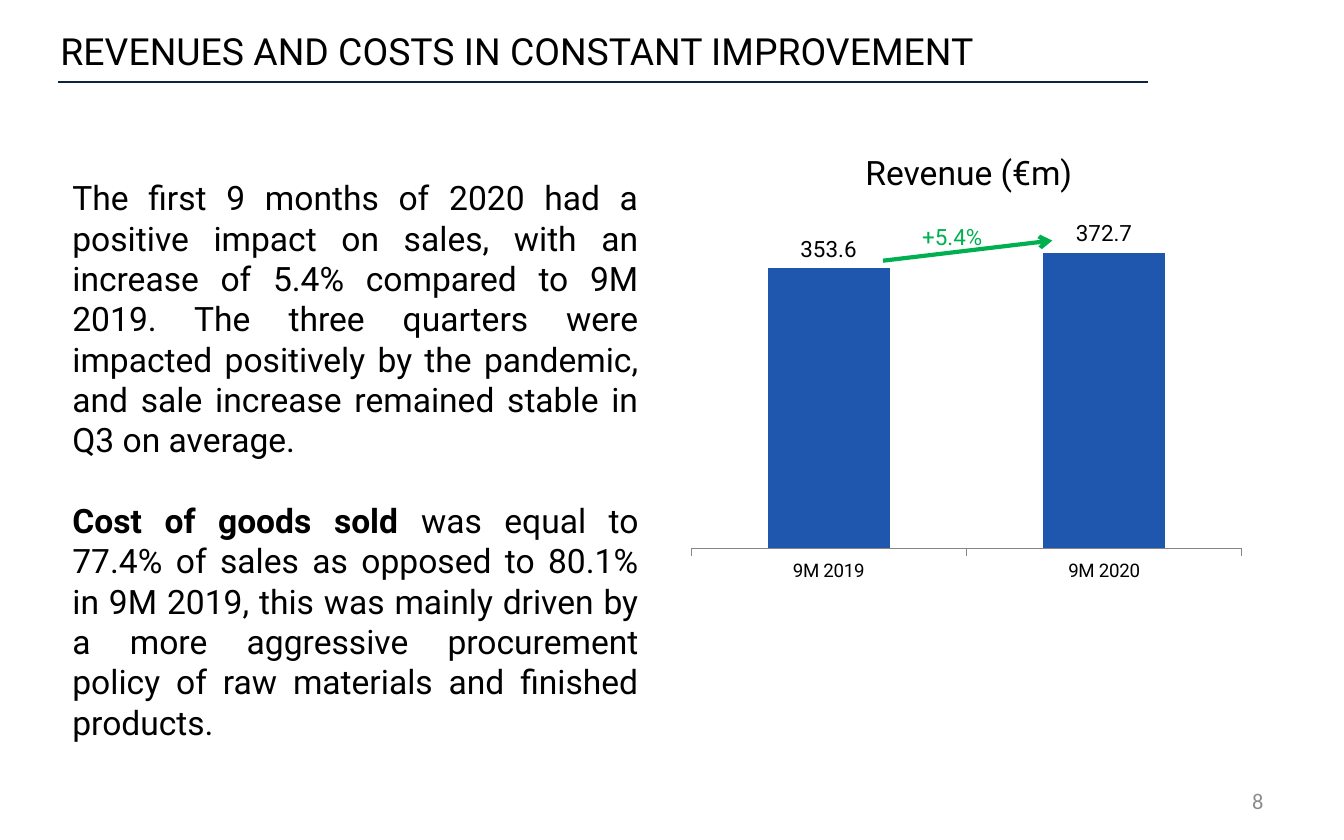
import pptx
import pptx.chart.data
import pptx.dml.color
import pptx.enum.chart
import pptx.enum.shapes
import pptx.enum.text
import pptx.oxml
import pptx.oxml.ns
import pptx.util

Inches, Pt = pptx.util.Inches, pptx.util.Pt
ALIGN, ANCHOR = pptx.enum.text.PP_ALIGN, pptx.enum.text.MSO_ANCHOR
COLORS = {"text": "000000", "bar": "1F57AE", "rule": "0E233E", "growth": "00B050",
          "page": "8C8C8C", "axis": "868686", "white": "FFFFFF"}


def rgb(name):
    """Return the named colour."""
    return pptx.dml.color.RGBColor.from_string(COLORS[name])


def style(font, size, color="text", name="Roboto"):
    """Format a font."""
    font.size, font.name = Pt(size), name
    font.color.rgb = rgb(color)


def add_line(s, start, end, color, width, arrow=False):
    """Draw a straight line, with an arrowhead at its end if asked."""
    line = s.shapes.add_connector(pptx.enum.shapes.MSO_CONNECTOR.STRAIGHT,
                                  *[Inches(v) for v in (*start, *end)])
    line.line.color.rgb = rgb(color)
    line.line.width = Pt(width)
    sp_pr = line._element.spPr
    if arrow:
        ln = sp_pr.find(pptx.oxml.ns.qn("a:ln"))
        ln.append(ln.makeelement(pptx.oxml.ns.qn("a:tailEnd"), {"type": "arrow"}))
    sp_pr.append(sp_pr.makeelement(pptx.oxml.ns.qn("a:effectLst"), {}))


def add_text(s, box, paragraphs, size, align=ALIGN.LEFT, color="text", name="Roboto",
             gap=0, wrap=True):
    """Add a text box of paragraphs, each a list of (text, bold) runs."""
    tf = s.shapes.add_textbox(*[Inches(v) for v in box]).text_frame
    tf.word_wrap = wrap
    for i, runs in enumerate(paragraphs):
        p = tf.add_paragraph() if i else tf.paragraphs[0]
        p.alignment = align
        if i:
            p.space_before = Pt(gap)
        for text, bold in runs:
            r = p.add_run()
            r.text = text
            r.font.bold = bold
            style(r.font, size, color, name)
    return tf


def add_heading(s, x, y, w, h):
    """Place the title and the rule under it."""
    title = s.shapes.title
    title.left, title.top, title.width, title.height = [Inches(v) for v in (x, y, w, h)]
    tf = title.text_frame
    tf.text = "REVENUES AND COSTS IN CONSTANT IMPROVEMENT"
    tf.vertical_anchor = ANCHOR.MIDDLE
    tf.paragraphs[0].alignment = ALIGN.LEFT
    style(tf.paragraphs[0].runs[0].font, 20)
    rule_y = y + h - 0.15
    add_line(s, (x + 0.08, rule_y), (x + 8.19, rule_y), "rule", 0.75)


def add_commentary(s, x, y, w, h):
    """Place the justified text on sales and costs."""
    paragraphs = [
        [("The first 9 months of 2020 had a positive impact on sales, with an increase of "
          "5.4% compared to 9M 2019. The three quarters were impacted positively by the "
          "pandemic, and sale increase remained stable in Q3 on average.", False)],
        [("Cost of goods sold ", True),
         ("was equal to 77.4% of sales as opposed to 80.1% in 9M 2019, this was mainly "
          "driven by a more aggressive procurement policy of raw materials and finished "
          "products.", False)],
    ]
    add_text(s, (x, y, w, h), paragraphs, 18, ALIGN.JUSTIFY, gap=21.6)


def set_plot_area(chart, x, y, w, h):
    """Fix the inner plot area, in fractions of the chart."""
    plot_area = chart._chartSpace.chart.plotArea
    for old in plot_area.findall(pptx.oxml.ns.qn("c:layout")):
        plot_area.remove(old)
    values = {"layoutTarget": "inner", "xMode": "edge", "yMode": "edge",
              "x": x, "y": y, "w": w, "h": h}
    parts = "".join(f'<c:{tag} val="{val}"/>' for tag, val in values.items())
    plot_area.insert(0, pptx.oxml.parse_xml(
        f'<c:layout {pptx.oxml.ns.nsdecls("c")}><c:manualLayout>{parts}'
        '</c:manualLayout></c:layout>'))


def add_revenue_chart(s, x, y, w, h):
    """Draw the revenue columns, held in thousands and labelled in millions."""
    data = pptx.chart.data.CategoryChartData(number_format="#,##0")
    data.categories = ["9M 2019", "9M 2020"]
    data.add_series("Series 1", [353600, 372700])
    chart = s.shapes.add_chart(pptx.enum.chart.XL_CHART_TYPE.COLUMN_CLUSTERED,
                               *[Inches(v) for v in (x, y, w, h)], data).chart
    chart.has_legend = chart.has_title = False
    style(chart.font, 10)
    set_plot_area(chart, 0.09, 0.06, 0.82, 0.83)

    values = chart.value_axis
    values.minimum_scale, values.maximum_scale = 0, 400000
    values.has_major_gridlines = values.visible = False
    categories = chart.category_axis
    categories.major_tick_mark = pptx.enum.chart.XL_TICK_MARK.OUTSIDE
    categories.format.line.color.rgb = rgb("axis")
    categories.format.line.width = Pt(0.25)
    style(categories.tick_labels.font, 10)

    plot = chart.plots[0]
    plot.gap_width = 126
    plot.vary_by_categories = False
    fill = plot.series[0].format.fill
    fill.solid()
    fill.fore_color.rgb = rgb("bar")
    plot.has_data_labels = True
    labels = plot.data_labels
    labels.show_value = True
    labels.number_format, labels.number_format_is_linked = "0.0,", False
    labels.position = pptx.enum.chart.XL_LABEL_POSITION.OUTSIDE_END
    style(labels.font, 12)


def add_growth_cell(s, x, y, w, h):
    """Place the one-cell table with the growth rate."""
    table = s.shapes.add_table(1, 1, *[Inches(v) for v in (x, y, w, h)]).table
    table.first_row = table.horz_banding = False
    cell = table.cell(0, 0)
    cell.fill.solid()
    cell.fill.fore_color.rgb = rgb("white")
    cell.margin_left = cell.margin_right = cell.margin_top = cell.margin_bottom = 0
    cell.vertical_anchor = ANCHOR.BOTTOM
    cell.text = "+5.4%"
    p = cell.text_frame.paragraphs[0]
    p.alignment = ALIGN.CENTER
    style(p.runs[0].font, 12, "growth")


def add_revenue(s, x, y, w, h):
    """Place the chart with its heading, growth rate and arrow."""
    add_revenue_chart(s, x, y, w, h)
    add_growth_cell(s, x + 2.04, y, 0.71, 0.32)
    add_line(s, (x + 1.88, y + 0.39), (x + 3.14, y + 0.24), "growth", 2.25, arrow=True)
    add_text(s, (x + 1.65, y - 0.47, 1.78, 0.4), [[("Revenue (€m)", False)]], 18, wrap=False)


def add_page_number(s, x, y, w, h):
    """Place the page number."""
    tf = add_text(s, (x, y, w, h), [[("8", False)]], 12, ALIGN.RIGHT, "page", "Calibri")
    tf.vertical_anchor = ANCHOR.MIDDLE


def main():
    """Build and save the slide."""
    prs = pptx.Presentation()
    prs.slide_width, prs.slide_height = Inches(10), Inches(6.25)
    s = prs.slides.add_slide(prs.slide_layouts[5])
    add_heading(s, 0.35, 0, 8.9, 0.76)
    add_commentary(s, 0.44, 1.27, 4.41, 4.64)
    add_revenue(s, 4.69, 1.55, 5, 2.84)
    add_page_number(s, 7.17, 5.79, 2.33, 0.33)
    prs.save("out.pptx")


if __name__ == "__main__":
    main()
